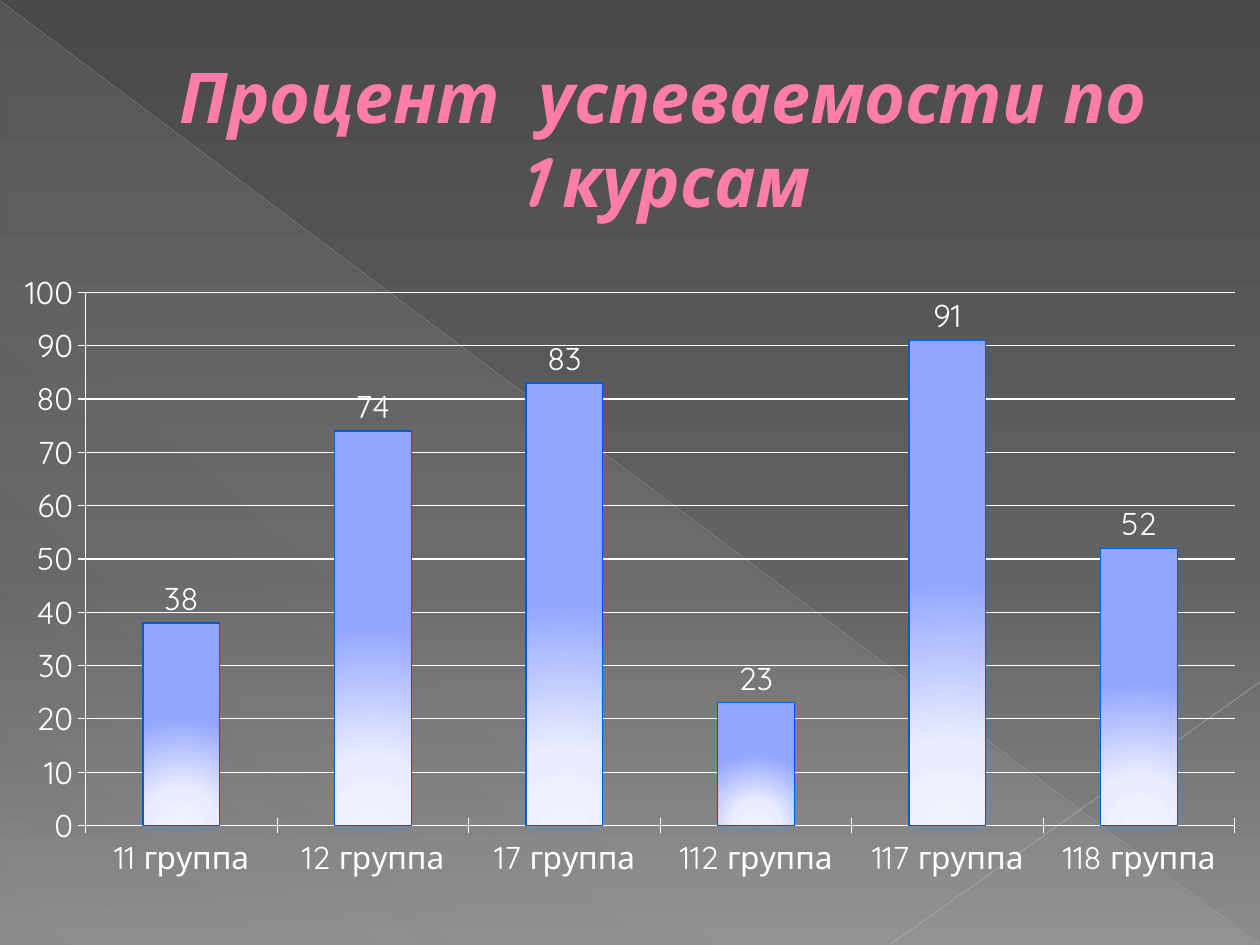
import pptx
import pptx.chart.data
import pptx.dml.color
import pptx.enum.chart
import pptx.enum.shapes
import pptx.enum.text
import pptx.oxml
import pptx.oxml.ns
import pptx.util

PX = 914400 / 126
FONT = "Quicksand"
WHITE = "FFFFFF"
qn = pptx.oxml.ns.qn


def px(length):
    return pptx.util.Emu(round(length * PX))


def color(value):
    return pptx.dml.color.RGBColor.from_string(value)


def apply(target, values):
    for name, value in values.items():
        setattr(target, name, value)


def xml(markup):
    return pptx.oxml.parse_xml(markup.replace(">", f" {pptx.oxml.ns.nsdecls('a')}>", 1))


def stroke(line, value, width):
    line.color.rgb = color(value)
    line.width = pptx.util.Pt(width)


def gradient(fill, holder, stops, direction):
    fill.gradient()
    grad = next(holder.iter(qn("a:gradFill")))
    for child in list(grad):
        grad.remove(child)
    marks = "".join(
        f'<a:gs pos="{place * 1000}"><a:srgbClr val="{value}">'
        f'<a:alpha val="{opacity * 1000}"/></a:srgbClr></a:gs>'
        for place, value, opacity in stops
    )
    grad.append(xml(f"<a:gsLst>{marks}</a:gsLst>"))
    grad.append(xml(direction))


def linear(angle):
    return f'<a:lin ang="{angle * 60000}" scaled="0"></a:lin>'


class Slide:
    def __init__(self, deck):
        self.page = deck.slides.add_slide(deck.slide_layouts[5])

    def background(self, stops):
        gradient(self.page.background.fill, self.page.element, stops, linear(90))

    def triangle(self, left, top, width, height, stops, angle):
        kind = pptx.enum.shapes.MSO_SHAPE.RIGHT_TRIANGLE
        shape = self.page.shapes.add_shape(kind, px(left), px(top), px(width), px(height))
        shape.shadow.inherit = False
        shape.line.fill.background()
        gradient(shape.fill, shape.element, stops, linear(angle))

    def line(self, start, end, value, width, opacity):
        kind = pptx.enum.shapes.MSO_CONNECTOR.STRAIGHT
        line = self.page.shapes.add_connector(kind, *map(px, start + end))
        stroke(line.line, value, width)
        tint = next(line.element.spPr.iter(qn("a:srgbClr")))
        tint.append(xml(f'<a:alpha val="{opacity * 1000}"></a:alpha>'))
        line.element.spPr.append(xml("<a:effectLst></a:effectLst>"))

    def title(self, left, top, width, height, lines, value, outline):
        box = self.page.shapes.title
        apply(box, {"left": px(left), "top": px(top), "width": px(width), "height": px(height)})
        apply(box.text_frame, {
            "word_wrap": True,
            "auto_size": pptx.enum.text.MSO_AUTO_SIZE.NONE,
            "vertical_anchor": pptx.enum.text.MSO_ANCHOR.MIDDLE,
        })
        para = box.text_frame.paragraphs[0]
        para.alignment = pptx.enum.text.PP_ALIGN.CENTER
        apply_indent = {"marL": str(px(67)), "indent": "0"}
        for name, amount in apply_indent.items():
            para._p.get_or_add_pPr().set(name, amount)
        para.text = "\v".join(lines)
        for span in para.runs:
            apply(span.font, {"name": FONT, "size": pptx.util.Pt(40), "bold": True, "italic": True})
            span.font.color.rgb = color(value)
            span._r.get_or_add_rPr().insert(0, xml(
                f'<a:ln w="6350"><a:solidFill><a:srgbClr val="{outline}"/></a:solidFill></a:ln>'
            ))

    def columns(self, left, top, width, height, values, stops, outline):
        data = pptx.chart.data.CategoryChartData()
        data.categories = list(values)
        data.add_series("Series 1", list(values.values()))
        kind = pptx.enum.chart.XL_CHART_TYPE.COLUMN_CLUSTERED
        chart = self.page.shapes.add_chart(
            kind, px(left), px(top), px(width), px(height), data
        ).chart
        apply(chart, {"has_legend": False, "has_title": False})
        apply(chart.font, {"name": FONT, "size": pptx.util.Pt(18)})
        chart.font.color.rgb = color(WHITE)

        apply(chart.value_axis, {
            "minimum_scale": 0, "maximum_scale": 100, "major_unit": 10,
            "has_major_gridlines": True,
        })
        for axis in (chart.category_axis, chart.value_axis):
            axis.major_tick_mark = pptx.enum.chart.XL_TICK_MARK.CROSS
            stroke(axis.format.line, WHITE, 0.75)
        stroke(chart.value_axis.major_gridlines.format.line, WHITE, 0.75)

        plot = chart.plots[0]
        apply(plot, {"gap_width": 150, "vary_by_categories": False, "has_data_labels": True})
        apply(plot.data_labels, {
            "show_value": True,
            "position": pptx.enum.chart.XL_LABEL_POSITION.OUTSIDE_END,
        })
        series = plot.series[0]
        gradient(
            series.format.fill, series._element, stops,
            '<a:path path="circle"><a:fillToRect l="50000" t="155000" r="50000" b="-55000"/></a:path>',
        )
        stroke(series.format.line, outline, 0.75)


def main():
    deck = pptx.Presentation()
    apply(deck, {"slide_width": px(1260), "slide_height": px(945)})
    slide = Slide(deck)
    slide.background([(0, "4A4A4A", 100), (60, "626262", 100), (100, "8C8C8C", 100)])
    slide.triangle(
        1, 3, 1257, 942, [(0, "D2D2D2", 10), (70, "D2D2D2", 8), (100, "D2D2D2", 1)], 133
    )
    slide.line((0, 1), (1259, 944), "BFBFBF", 0.39, 35)
    slide.line((1260, 682), (891, 944), "C6C6C6", 0.47, 45)
    slide.title(
        0, 59, 1260, 158, ["Процент  успеваемости по", "1 курсам"], "FF7DA7", "B12761"
    )
    slide.columns(
        0, 260, 1260, 630,
        {"11 группа": 38, "12 группа": 74, "17 группа": 83,
         "112 группа": 23, "117 группа": 91, "118 группа": 52},
        [(0, "F0F2FF", 100), (34, "EAEDFF", 100), (100, "92A5FF", 100)], "005BD3",
    )
    deck.save("out.pptx")


if __name__ == "__main__":
    main()
